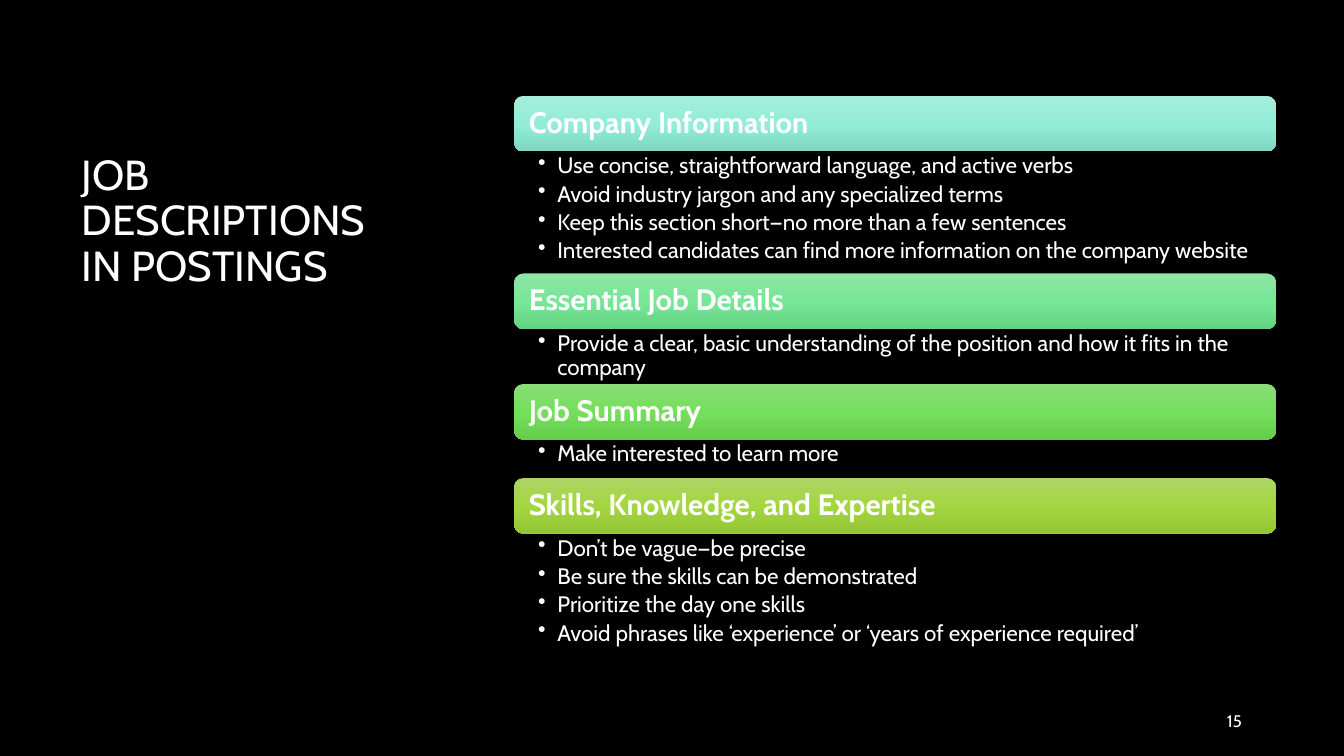
"""Build the slide on job descriptions in postings, with four headed bullet lists."""
from copy import deepcopy
from dataclasses import dataclass

from lxml.etree import SubElement
from pptx import Presentation
from pptx.dml.color import RGBColor as RGB
from pptx.enum.shapes import MSO_SHAPE as Shape
from pptx.enum.text import MSO_ANCHOR as Anchor, PP_ALIGN as Align
from pptx.oxml.ns import qn
from pptx.shapes.autoshape import Shape as AutoShape
from pptx.slide import Slide
from pptx.util import Inches, Pt

WIDTH, HEIGHT = Inches(13.33), Inches(7.5)


@dataclass(frozen=True)
class Theme:
    font: str = "Cabin"
    back: str = "000000"
    ink: str = "FFFFFF"
    title: float = 30
    heading: float = 21
    body: float = 16
    number: float = 12
    bullet_gap: float = 3


@dataclass(frozen=True)
class Box:
    left: float
    top: float
    width: float
    height: float

    def emu(self) -> tuple[int, int, int, int]:
        return col(self.left), row(self.top), col(self.width), row(self.height)


@dataclass(frozen=True)
class Section:
    heading: str
    shades: tuple[str, str, str]
    list_rows: float
    bullets: tuple[str, ...]


THEME = Theme()
LIST_LEFT, LIST_TOP, LIST_WIDTH, BAR_ROWS = 38.25, 12.67, 56.7, 7.37
HANG = 1.43
SECTIONS = (
    Section("Company Information", ("A4EDDB", "93EDD7", "7DD8C2"), 16.13, (
        "Use concise, straightforward language, and active verbs",
        "Avoid industry jargon and any specialized terms",
        "Keep this section short—no more than a few sentences",
        "Interested candidates can find more information on the company website",
    )),
    Section("Essential Job Details", ("8DE6A5", "77E697", "64D383"), 7.25, (
        "Provide a clear, basic understanding of the position and how it fits in the company",
    )),
    Section("Job Summary", ("89DE77", "75DE5C", "64CD4B"), 5.07, (
        "Make interested to learn more",
    )),
    Section("Skills, Knowledge, and Expertise", ("ACD564", "A4D642", "94C533"), 16.13, (
        "Don’t be vague—be precise",
        "Be sure the skills can be demonstrated",
        "Prioritize the day one skills",
        "Avoid phrases like ‘experience’ or ‘years of experience required’",
    )),
)


def col(share: float) -> int:
    return round(WIDTH * share / 100)


def row(share: float) -> int:
    return round(HEIGHT * share / 100)


def write(sp: AutoShape, *lines: str, size: float, bold: bool = False,
          align: Align = Align.LEFT, anchor: Anchor = Anchor.TOP, spacing: float = 0.9,
          gap: float = 0, bullet: bool = False,
          inset: tuple[float, float, float] = (0.75, 0.67, 0.75)) -> None:
    tf = sp.text_frame
    tf.word_wrap = True
    tf.vertical_anchor = anchor
    tf.margin_left, tf.margin_right = col(inset[0]), col(inset[2])
    tf.margin_top = tf.margin_bottom = row(inset[1])
    for i, line in enumerate(lines):
        p = tf.add_paragraph() if i else tf.paragraphs[0]
        p.alignment, p.line_spacing, p.space_after = align, spacing, Pt(gap)
        if bullet:
            ppr = p._p.get_or_add_pPr()
            ppr.set("marL", str(col(HANG)))
            ppr.set("indent", str(-col(HANG)))
            SubElement(ppr, qn("a:buChar"), char="•")
        r = p.add_run()
        r.text = line
        r.font.name, r.font.size, r.font.bold = THEME.font, Pt(size), bold
        r.font.color.rgb = RGB.from_string(THEME.ink)


def add_text(s: Slide, box: Box) -> AutoShape:
    return s.shapes.add_textbox(*box.emu())


def add_bar(s: Slide, box: Box, shades: tuple[str, str, str]) -> AutoShape:
    sp = s.shapes.add_shape(Shape.ROUNDED_RECTANGLE, *box.emu())
    sp.shadow.inherit = False
    sp.line.fill.background()
    sp.fill.gradient()
    sp.fill.gradient_angle = 270
    stops = next(sp._element.iter(qn("a:gsLst")))
    stops.append(deepcopy(stops[0]))
    for i, (stop, shade) in enumerate(zip(sp.fill.gradient_stops, shades)):
        stop.position = i / 2
        stop.color.rgb = RGB.from_string(shade)
    return sp


def add_sections(s: Slide) -> None:
    top = LIST_TOP
    for section in SECTIONS:
        bar = add_bar(s, Box(LIST_LEFT, top, LIST_WIDTH, BAR_ROWS), section.shades)
        write(bar, section.heading, size=THEME.heading, bold=True,
              anchor=Anchor.MIDDLE, inset=(0.9, 1.2, 0.9))
        top += BAR_ROWS
        bullets = add_text(s, Box(LIST_LEFT, top, LIST_WIDTH, section.list_rows))
        write(bullets, *section.bullets, size=THEME.body, gap=THEME.bullet_gap,
              bullet=True, inset=(1.8, 0.4, 1.2))
        top += section.list_rows


def main() -> None:
    prs = Presentation()
    prs.slide_width, prs.slide_height = WIDTH, HEIGHT
    s = prs.slides.add_slide(prs.slide_layouts[6])
    s.background.fill.solid()
    s.background.fill.fore_color.rgb = RGB.from_string(THEME.back)
    write(add_text(s, Box(5.33, 19.73, 24.08, 64.93)),
          "JOB DESCRIPTIONS IN POSTINGS", size=THEME.title)
    add_sections(s)
    write(add_text(s, Box(70.65, 92.67, 22.5, 5.33)), "15", size=THEME.number,
          align=Align.RIGHT, anchor=Anchor.MIDDLE, spacing=1.0)
    prs.save("out.pptx")


if __name__ == "__main__":
    main()
